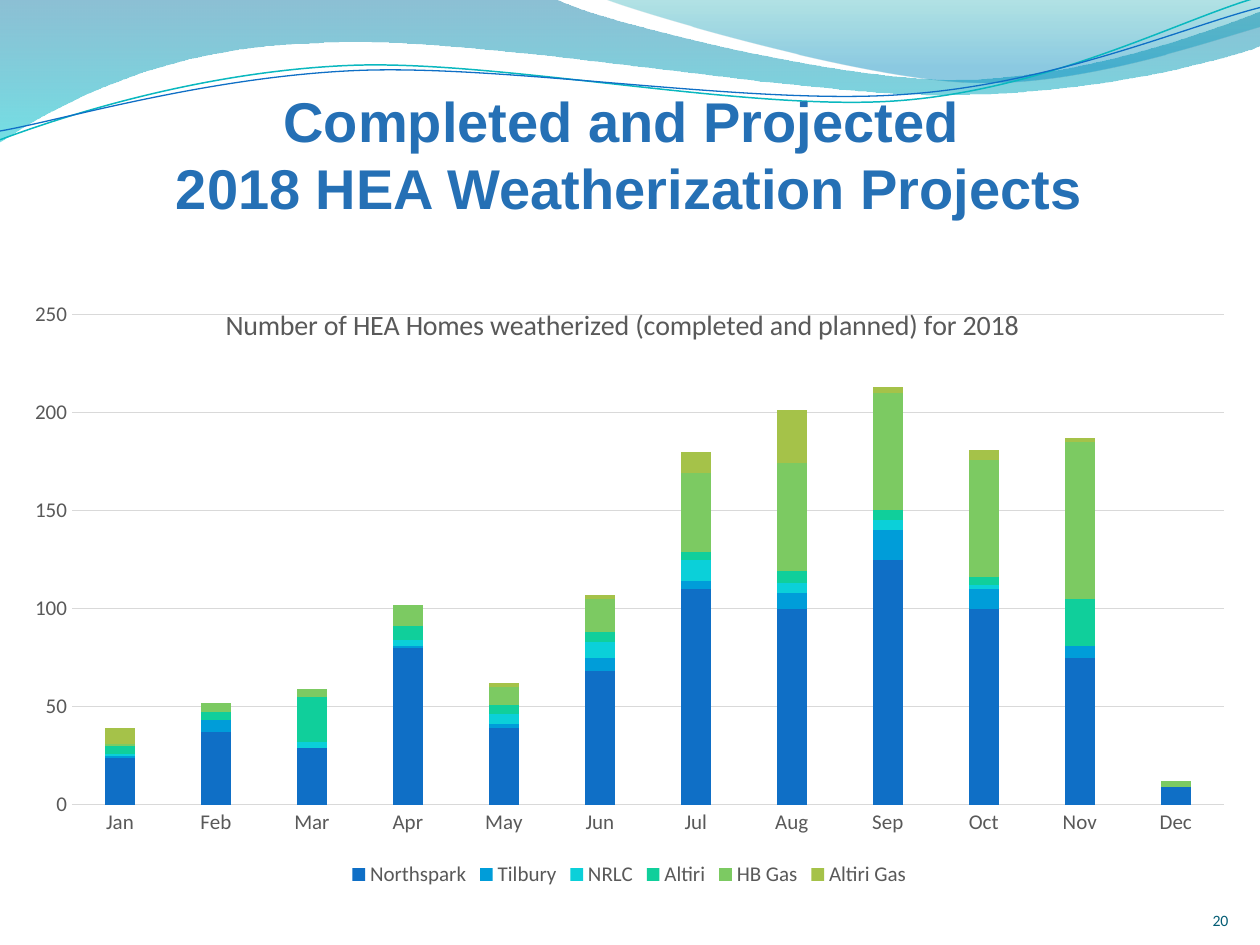
from dataclasses import dataclass

from lxml import etree
from pptx import Presentation
from pptx.chart.data import CategoryChartData
from pptx.dml.color import RGBColor
from pptx.enum.chart import XL_CHART_TYPE, XL_LEGEND_POSITION, XL_TICK_MARK
from pptx.enum.text import MSO_ANCHOR, PP_ALIGN
from pptx.oxml.ns import qn
from pptx.util import Inches, Pt

STACKED = XL_CHART_TYPE.COLUMN_STACKED
LEGEND_BOTTOM = XL_LEGEND_POSITION.BOTTOM
NO_TICK = XL_TICK_MARK.NONE
BOTTOM = MSO_ANCHOR.BOTTOM
CENTER, RIGHT = PP_ALIGN.CENTER, PP_ALIGN.RIGHT


@dataclass(frozen=True)
class Theme:
    heading: RGBColor = RGBColor.from_string("2570B5")
    page: RGBColor = RGBColor.from_string("045D75")
    label: RGBColor = RGBColor.from_string("595959")
    grid: RGBColor = RGBColor.from_string("D9D9D9")
    heading_size: Pt = Pt(32)
    chart_title_size: Pt = Pt(16)
    label_size: Pt = Pt(12)
    page_size: Pt = Pt(9)
    heading_font: str = "Arial"
    body_font: str = "Calibri"


theme = Theme()


def add_wave(shapes, start, segments, close):
    builder = shapes.build_freeform(Inches(start[0]), Inches(start[1]))
    ends = [(Inches(segment[-2]), Inches(segment[-1])) for segment in segments]
    builder.add_line_segments(ends, close=close)
    wave = builder.convert_to_shape()
    wave.shadow.inherit = False
    edges = list(wave._element.iter(qn("a:lnTo")))
    for edge, segment in zip(edges, segments):
        if len(segment) == 6:
            curve = etree.Element(qn("a:cubicBezTo"))
            for x, y in zip(segment[::2], segment[1::2]):
                etree.SubElement(curve, qn("a:pt"), x=str(Inches(x) - wave.left),
                                 y=str(Inches(y) - wave.top))
            edge.getparent().replace(edge, curve)
    return wave


def set_layout(parent, index, **fractions):
    for old in parent.findall(qn("c:layout")):
        parent.remove(old)
    layout = etree.Element(qn("c:layout"))
    manual = etree.SubElement(layout, qn("c:manualLayout"))
    if "w" in fractions:
        etree.SubElement(manual, qn("c:layoutTarget"), val="inner")
    for side in "xy":
        etree.SubElement(manual, qn(f"c:{side}Mode"), val="edge")
    for side, value in fractions.items():
        etree.SubElement(manual, qn(f"c:{side}"), val=str(value))
    parent.insert(index, layout)


prs = Presentation()
prs.slide_width, prs.slide_height = Inches(10), Inches(7.5)
slide = prs.slides.add_slide(prs.slide_layouts[6])

bands = [
    ((0, 0),
     [(4.4, -0.01), (4.76, 0.17, 6.64, 0.63, 7.58, 0.63), (8.53, 0.63, 9.58, 0.26, 10, 0.09),
      (10.01, 0.36), (9.83, 0.44, 8.7, 0.76, 7.46, 0.75), (6.22, 0.75, 3.82, 0.28, 2.57, 0.34),
      (1.29, 0.36, 0.46, 0.83, -0.01, 1.13)],
     [(0, "0074A1", 45), (1, "00C6CF", 55)]),
    ((4.79, -0.01),
     [(5.09, 0.11, 6.82, 0.62, 7.69, 0.65), (8.56, 0.69, 9.61, 0.32, 10, 0.21), (10, 0)],
     [(0, "00A1A9", 30), (0.8, "008BBF", 45)]),
]
for start, segments, stops in bands:
    band = add_wave(slide.shapes, start, segments, True)
    band.line.fill.background()
    band.fill.gradient()
    band.fill.gradient_angle = 270
    for stop, (position, color, _) in zip(band.fill.gradient_stops, stops):
        stop.position = position
        stop.color.rgb = RGBColor.from_string(color)
    for color_tag, (_, _, opacity) in zip(band._element.iter(qn("a:srgbClr")), stops):
        etree.SubElement(color_tag, qn("a:alpha"), val=str(opacity * 1000))

strands = [
    ((0, 1.11), [(0.48, 0.93, 1.58, 0.57, 2.77, 0.52), (3.95, 0.47, 5.93, 0.89, 7.13, 0.8),
                 (8.33, 0.71, 9.38, 0.15, 9.98, -0.02)], "0AB8BF", 0.85),
    ((0, 1.04), [(0.47, 0.96, 1.64, 0.61, 2.83, 0.56), (4.03, 0.51, 5.97, 0.84, 7.17, 0.75),
                 (8.36, 0.67, 9.41, 0.21, 10, 0.06)], "0F6FC6", 0.75),
]
for start, segments, color, width in strands:
    strand = add_wave(slide.shapes, start, segments, False)
    strand.fill.background()
    strand.line.color.rgb = RGBColor.from_string(color)
    strand.line.width = Pt(width)

homes = CategoryChartData()
homes.categories = ["Jan", "Feb", "Mar", "Apr", "May", "Jun",
                    "Jul", "Aug", "Sep", "Oct", "Nov", "Dec"]
utilities = [
    ("Northspark", "0F6FC6", [24, 37, 29, 80, 39, 68, 110, 100, 125, 100, 75, 9]),
    ("Tilbury", "009DD9", [1, 6, 0, 1, 2, 7, 4, 8, 15, 10, 6, 0]),
    ("NRLC", "0BD0D9", [1, None, 3, 3, 5, 8, 11, 5, 5, 2, 0, 0]),
    ("Altiri", "10CF9B", [4, 4, 23, 7, 5, 5, 4, 6, 5, 4, 24, 0]),
    ("HB Gas", "7CCA62", [1, 5, 4, 11, 9, 17, 40, 55, 60, 60, 80, 3]),
    ("Altiri Gas", "A5C249", [8, 0, 0, 0, 2, 2, 11, 27, 3, 5, 2, 0]),
]
for utility, _, counts in utilities:
    homes.add_series(utility, counts)
chart = slide.shapes.add_chart(STACKED, Inches(0.08), Inches(1.75),
                               Inches(9.83), Inches(5.33), homes).chart
chart.font.name = theme.body_font
chart.font.size = theme.label_size
chart.font.color.rgb = theme.label

plot = chart.plots[0]
plot.gap_width, plot.overlap, plot.vary_by_categories = 219, 100, False
for series, (_, color, _) in zip(plot.series, utilities):
    series.format.fill.solid()
    series.format.fill.fore_color.rgb = RGBColor.from_string(color)

months, totals = chart.category_axis, chart.value_axis
for axis in (months, totals):
    axis.major_tick_mark = axis.minor_tick_mark = NO_TICK
totals.minimum_scale, totals.maximum_scale, totals.major_unit = 0, 250, 50
totals.format.line.fill.background()
for rule in (months.format.line, totals.major_gridlines.format.line):
    rule.color.rgb = theme.grid
    rule.width = Pt(0.75)

chart.has_legend = True
chart.legend.position = LEGEND_BOTTOM
chart.legend.include_in_layout = False

chart.has_title = True
caption = chart.chart_title.text_frame
caption.text = "Number of HEA Homes weatherized (completed and planned) for 2018 "
caption_font = caption.paragraphs[0].runs[0].font
caption_format = {"name": theme.body_font, "size": theme.chart_title_size, "bold": False}
for attribute, value in caption_format.items():
    setattr(caption_font, attribute, value)
caption_font.color.rgb = theme.label
title_tag = chart.chart_title._element
set_layout(title_tag, 1, x=0.17, y=0.12)
title_tag.find(qn("c:overlay")).set("val", "1")
set_layout(chart._chartSpace.find(".//" + qn("c:plotArea")), 0, x=0.05, y=0.14, w=0.93, h=0.73)

texts = [
    ("Completed and Projected \v2018 HEA Weatherization Projects", (0.08, 0.9, 9.83, 0.85), 0.05,
     CENTER, theme.heading,
     {"name": theme.heading_font, "size": theme.heading_size, "bold": True}),
    ("20", (8.92, 6.98, 0.83, 0.4), 0, RIGHT, theme.page,
     {"name": theme.body_font, "size": theme.page_size, "bold": False}),
]
for wording, place, top_inset, alignment, color, font_format in texts:
    frame = slide.shapes.add_textbox(*map(Inches, place)).text_frame
    frame_format = {"word_wrap": True, "vertical_anchor": BOTTOM, "margin_left": 0,
                    "margin_right": 0, "margin_bottom": 0, "margin_top": Inches(top_inset)}
    for attribute, value in frame_format.items():
        setattr(frame, attribute, value)
    paragraph = frame.paragraphs[0]
    paragraph.text = wording
    paragraph.alignment = alignment
    for run in paragraph.runs:
        for attribute, value in font_format.items():
            setattr(run.font, attribute, value)
        run.font.color.rgb = color

prs.save("out.pptx")
